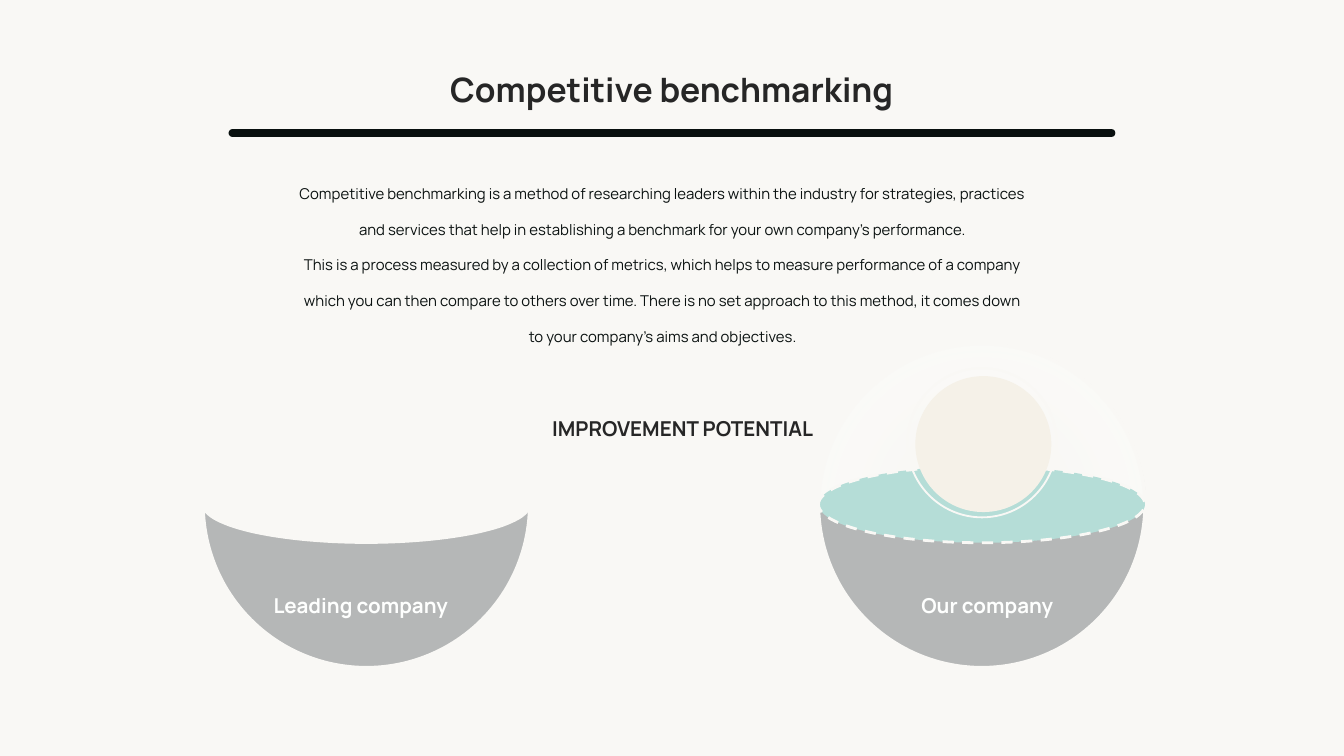
from dataclasses import dataclass
from math import cos, pi, sin
from typing import Optional

from lxml import etree
from pptx import Presentation
from pptx import util as u
from pptx.dml.color import RGBColor
from pptx.enum import dml, shapes, text
from pptx.oxml.ns import qn

PAPER = RGBColor(0xF9, 0xF8, 0xF5)
INK = RGBColor(0x09, 0x10, 0x0F)
HEADING = RGBColor(0x26, 0x26, 0x26)
GREY = RGBColor(0xB5, 0xB7, 0xB7)
MINT = RGBColor(0xB5, 0xDD, 0xD7)
CREAM = RGBColor(0xF5, 0xF1, 0xE8)
WHITE = RGBColor(0xFE, 0xFF, 0xFE)

BOWL_TOP, BOWL_SIZE = 6.45, 6.17
LEFT_BOWL, RIGHT_BOWL = 3.84, 15.47
HALF_CIRCLE = (0, 108)  # 0 to 180 degrees, 60000 units a degree over 100000


@dataclass
class Shape:
    kind: shapes.MSO_SHAPE
    box: tuple[float, float, float, float]  # left, top, width, height in cm
    fill: Optional[RGBColor] = None
    line: Optional[RGBColor] = None
    weight: float = 1.75
    dashed: bool = False
    adjustments: tuple[float, ...] = ()
    rotation: float = 0


@dataclass
class Label:
    box: tuple[float, float, float, float]
    paragraphs: tuple[str, ...]
    size: float
    color: RGBColor
    spacing: float
    bold: bool = True
    anchor: text.MSO_ANCHOR = text.MSO_ANCHOR.TOP
    bottom: float = 0


def style(s, fill: Optional[RGBColor], line: Optional[RGBColor], weight: float) -> None:
    s.shadow.inherit = False
    for part, color in ((s.fill, fill), (s.line.fill, line)):
        if color is None:
            part.background()
        else:
            part.solid()
            part.fore_color.rgb = color
    if line is not None:
        s.line.width = u.Pt(weight)


def draw_shape(parent, d: Shape):
    s = parent.add_shape(d.kind, *map(u.Cm, d.box))
    for i, value in enumerate(d.adjustments):
        s.adjustments[i] = value
    s.rotation = d.rotation
    style(s, d.fill, d.line, d.weight)
    if d.dashed:
        s.line.dash_style = dml.MSO_LINE.DASH
    return s


def draw_label(parent, d: Label) -> None:
    tf = parent.add_textbox(*map(u.Cm, d.box)).text_frame
    frame = dict(word_wrap=True, auto_size=text.MSO_AUTO_SIZE.SHAPE_TO_FIT_TEXT,
                 vertical_anchor=d.anchor, margin_left=0, margin_right=0,
                 margin_top=0, margin_bottom=u.Cm(d.bottom))
    for name, value in frame.items():
        setattr(tf, name, value)
    for i, words in enumerate(d.paragraphs):
        p = tf.add_paragraph() if i else tf.paragraphs[0]
        p.alignment, p.line_spacing = text.PP_ALIGN.CENTER, d.spacing
        r = p.add_run()
        r.text = words
        font = dict(name="Manrope", size=u.Pt(d.size), bold=d.bold)
        for name, value in font.items():
            setattr(r.font, name, value)
        r.font.color.rgb = d.color


def draw_bowl(parent, left: float) -> None:
    draw_shape(parent, Shape(shapes.MSO_SHAPE.PIE, (left, BOWL_TOP, BOWL_SIZE, BOWL_SIZE),
                             GREY, PAPER, adjustments=HALF_CIRCLE))


def draw_hollow(parent, left: float) -> None:
    """A tall upper half and a shallow lower half scoop out the bowl."""
    radius, middle, rise, dip, steps = BOWL_SIZE / 2, 9.53, 3.05, 0.72, 120
    points = []
    for i in range(steps):
        a = 2 * pi * i / steps
        depth = dip if a < pi else rise
        points.append((u.Cm(left + radius + radius * cos(a)), u.Cm(middle + depth * sin(a))))
    builder = parent.build_freeform(*points[0])
    builder.add_line_segments(points[1:], close=True)
    style(builder.convert_to_shape(), PAPER, PAPER, 1.75)


def fade(s, stops: tuple[tuple[int, RGBColor, int], ...]) -> None:
    """Replace a solid fill by a round gradient of (position, colour, opacity)."""
    old = s.fill._xPr.find(qn("a:solidFill"))
    grad = etree.Element(qn("a:gradFill"), rotWithShape="1")
    gs_list = etree.SubElement(grad, qn("a:gsLst"))
    for position, color, opacity in stops:
        gs = etree.SubElement(gs_list, qn("a:gs"), pos=str(position * 1000))
        clr = etree.SubElement(gs, qn("a:srgbClr"), val=str(color))
        etree.SubElement(clr, qn("a:alpha"), val=str(opacity * 1000))
    circle = etree.SubElement(grad, qn("a:path"), path="circle")
    etree.SubElement(circle, qn("a:fillToRect"), dict.fromkeys("ltrb", "50000"))
    old.getparent().replace(old, grad)


def company_label(left: float, words: str) -> Label:
    return Label((left, 10.82, 6.38, 0.66), (words,), 11, WHITE, 2.67,
                 anchor=text.MSO_ANCHOR.MIDDLE, bottom=0.18)


TITLE = Label((6.27, 0.89, 12.85, 0.76), ("Competitive benchmarking",), 18, HEADING, 1.54)
BODY = Label((5.61, 3.15, 13.84, 3.76), (
    "Competitive benchmarking is a method of researching leaders within the industry for "
    "strategies, practices and services that help in establishing a benchmark for your own "
    "company’s performance.",
    "This is a process measured by a collection of metrics, which helps to measure "
    "performance of a company which you can then compare to others over time. There is no "
    "set approach to this method, it comes down to your company’s aims and objectives.",
), 8, INK, 2, bold=False)
POTENTIAL = Label((10.01, 7.67, 5.79, 0.48), ("IMPROVEMENT POTENTIAL",), 11, HEADING, 1.43)
RULE = Shape(shapes.MSO_SHAPE.ROUNDED_RECTANGLE, (4.32, 2.44, 16.76, 0.15), INK,
             adjustments=(0.5,))
DOME = Shape(shapes.MSO_SHAPE.PIE, (RIGHT_BOWL, 6.5, BOWL_SIZE, BOWL_SIZE), WHITE, PAPER,
             adjustments=HALF_CIRCLE, rotation=180)
SURFACE = Shape(shapes.MSO_SHAPE.OVAL, (RIGHT_BOWL, 8.81, BOWL_SIZE, 1.45), MINT, PAPER,
                1.5, dashed=True)
BALL = Shape(shapes.MSO_SHAPE.OVAL, (17.3, 7.11, 2.57, 2.57), CREAM)
RING = Shape(shapes.MSO_SHAPE.OVAL, (17.15, 6.96, 2.82, 2.82), None, PAPER, 1)


def main() -> None:
    prs = Presentation()
    prs.slide_width, prs.slide_height = u.Cm(25.4), u.Cm(14.29)
    slide = prs.slides.add_slide(prs.slide_layouts[6])
    slide.background.fill.solid()
    slide.background.fill.fore_color.rgb = PAPER
    sp = slide.shapes

    # Heading and explanation
    draw_label(sp, TITLE)
    draw_label(sp, BODY)
    draw_shape(sp, RULE)

    # Leading company: hollow bowl
    leader = sp.add_group_shape().shapes
    draw_bowl(leader, LEFT_BOWL)
    draw_hollow(leader, LEFT_BOWL)

    # Our company: filled bowl under a clear dome
    ours = sp.add_group_shape().shapes
    fade(draw_shape(ours, DOME),
         ((0, WHITE, 0), (28, WHITE, 0), (63, WHITE, 30), (100, PAPER, 100)))
    draw_bowl(ours, RIGHT_BOWL)
    draw_shape(ours, SURFACE)

    # Potential: ball and ring
    draw_label(sp, POTENTIAL)
    potential = sp.add_group_shape().shapes
    for d in (BALL, RING):
        draw_shape(potential, d)

    # Company names
    draw_label(sp, company_label(3.63, "Leading company"))
    draw_label(sp, company_label(RIGHT_BOWL, "Our company"))

    prs.save("out.pptx")


if __name__ == "__main__":
    main()
